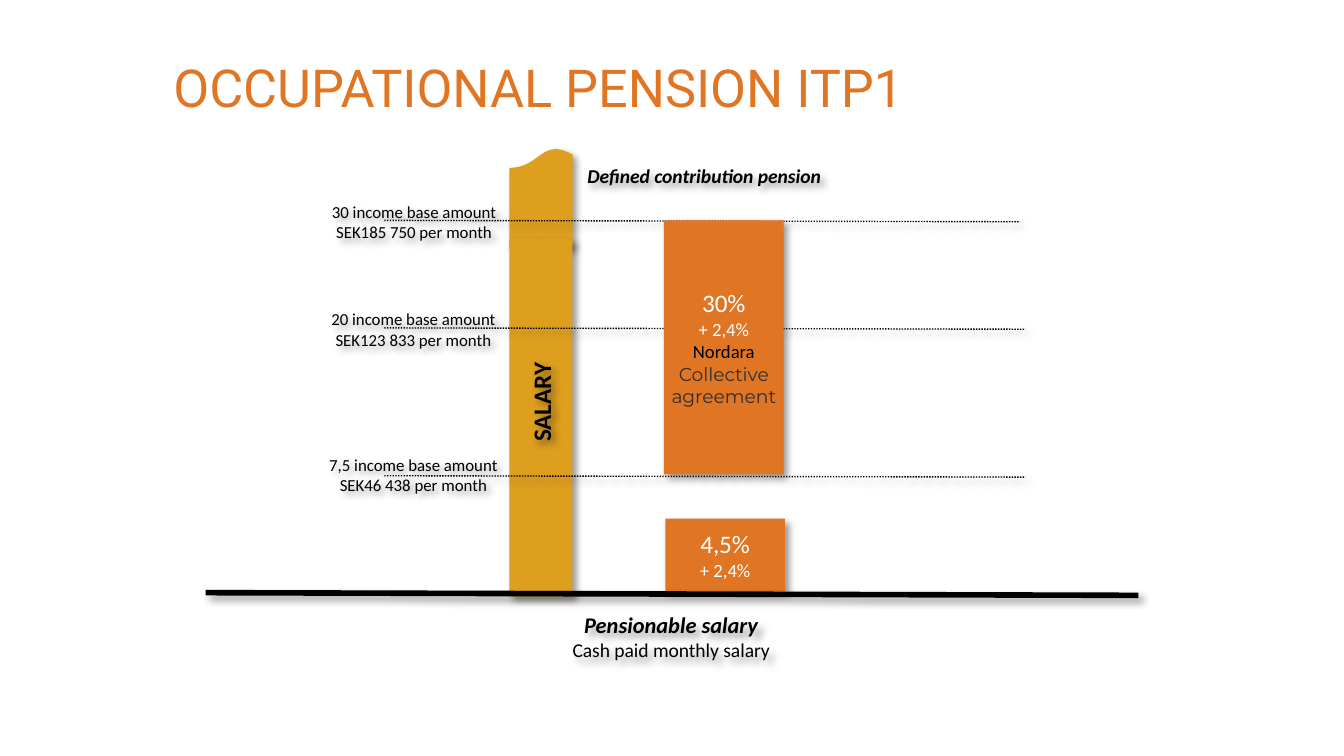
from pptx import Presentation
from pptx.dml.color import RGBColor
from pptx.enum.dml import MSO_LINE
from pptx.enum.shapes import MSO_CONNECTOR, MSO_SHAPE
from pptx.enum.text import MSO_ANCHOR, PP_ALIGN
from pptx.oxml import parse_xml
from pptx.util import Inches, Pt

ORANGE = RGBColor(0xE0, 0x75, 0x23)
GOLD = RGBColor(0xDE, 0x9F, 0x1F)
BLACK = RGBColor(0, 0, 0)
WHITE = RGBColor(0xFF, 0xFF, 0xFF)
CHARCOAL = RGBColor(0x2D, 0x2F, 0x33)

SHADOW = (
    '<a:effectLst xmlns:a="http://schemas.openxmlformats.org/drawingml/2006/main">'
    '<a:outerShdw blurRad="50800" dist="38100" dir="2700000" algn="tl" rotWithShape="0">'
    '<a:srgbClr val="000000"><a:alpha val="40000"/></a:srgbClr>'
    '</a:outerShdw></a:effectLst>'
)


def add_shadow(shape):
    shape._element.spPr.append(parse_xml(SHADOW))


def write_lines(shape, lines, alignment=PP_ALIGN.CENTER, margin=0, wrap=True):
    """Fill a shape with (text, size, colour, font, bold, italic) paragraphs."""
    text_frame = shape.text_frame
    text_frame.word_wrap = wrap
    text_frame.margin_left = text_frame.margin_right = Inches(margin)
    text_frame.margin_top = text_frame.margin_bottom = Inches(margin / 2)
    text_frame.text = "\n".join(line[0] for line in lines)
    for paragraph, (_, size, colour, name, bold, italic) in zip(text_frame.paragraphs, lines):
        paragraph.alignment = alignment
        for run in paragraph.runs:
            run.font.size = Pt(size)
            run.font.color.rgb = colour
            run.font.name = name
            run.font.bold = bold
            run.font.italic = italic


presentation = Presentation()
presentation.slide_width = Inches(10)
presentation.slide_height = presentation.slide_width * 9 // 16
slide = presentation.slides.add_slide(presentation.slide_layouts[5])
shapes = slide.shapes

# Title
title = shapes.title
title.left, title.top = Inches(1.19), Inches(0.44)
title.width, title.height = Inches(7.5), Inches(0.57)
write_lines(title, [("OCCUPATIONAL PENSION ITP1", 28, ORANGE, "Roboto", False, False)],
            PP_ALIGN.LEFT, 0.1)
title.text_frame.vertical_anchor = MSO_ANCHOR.TOP
title.text_frame.paragraphs[0].line_spacing = 0.83

# Bars: the salary column with its wavy top, and the two contribution bars
bars = {}
for name, kind, colour, left, top, width, height in [
    ("salary top", MSO_SHAPE.FLOWCHART_DOCUMENT, GOLD, 3.79, 1.1, 0.47, 0.75),
    ("salary", MSO_SHAPE.RECTANGLE, GOLD, 3.79, 1.78, 0.47, 2.66),
    ("lower contribution", MSO_SHAPE.RECTANGLE, ORANGE, 4.95, 3.86, 0.89, 0.54),
    ("upper contribution", MSO_SHAPE.RECTANGLE, ORANGE, 4.94, 1.64, 0.89, 1.89),
]:
    bar = shapes.add_shape(kind, Inches(left), Inches(top), Inches(width), Inches(height))
    bar.fill.solid()
    bar.fill.fore_color.rgb = colour
    bar.line.fill.background()
    add_shadow(bar)
    bars[name] = bar
bars["salary top"].rotation = 180

write_lines(bars["lower contribution"], [
    ("4,5%", 13.5, WHITE, "Calibri", False, False),
    ("+ 2,4%", 10, WHITE, "Calibri", False, False),
], wrap=False)
write_lines(bars["upper contribution"], [
    ("30%", 13.5, WHITE, "Calibri", False, False),
    ("+ 2,4%", 10, WHITE, "Calibri", False, False),
    ("Nordara", 10, BLACK, "Calibri", False, False),
    ("Collective", 10, CHARCOAL, "Montserrat", False, False),
    ("agreement", 10, CHARCOAL, "Montserrat", False, False),
], wrap=False)

# Income levels and the base line
for left, right, top, drop, weight, dash in [
    (2.86, 7.59, 1.64, 0.01, 0.75, MSO_LINE.ROUND_DOT),
    (2.86, 7.63, 2.44, 0.01, 0.75, MSO_LINE.ROUND_DOT),
    (2.86, 7.63, 3.54, 0.01, 0.75, MSO_LINE.ROUND_DOT),
    (1.53, 8.47, 4.41, 0.02, 3, MSO_LINE.SOLID),
]:
    line = shapes.add_connector(MSO_CONNECTOR.STRAIGHT, Inches(left), Inches(top),
                                Inches(right), Inches(top + drop))
    line.line.color.rgb = BLACK
    line.line.width = Pt(weight)
    line.line.dash_style = dash
    add_shadow(line)

# The upper bar covers the level lines
shapes._spTree.append(bars["upper contribution"]._element)

# Labels
for left, top, width, height, alignment, margin, rotation, text, size, bold, italic in [
    (2.33, 1.5, 1.5, 0.3, PP_ALIGN.CENTER, 0, 0,
     "30 income base amount\vSEK185 750 per month", 9, False, False),
    (2.28, 2.3, 1.59, 0.3, PP_ALIGN.CENTER, 0, 0,
     "20 income base amount\vSEK123 833 per month", 9, False, False),
    (2.34, 3.38, 1.47, 0.3, PP_ALIGN.CENTER, 0, 0,
     "7,5 income base amount\vSEK46 438 per month", 9, False, False),
    (4.37, 1.22, 2.07, 0.18, PP_ALIGN.LEFT, 0, 0,
     "Defined contribution pension", 10.5, True, True),
    (3.63, 2.82, 0.8, 0.33, PP_ALIGN.LEFT, 0.1, 270, "SALARY", 13.5, True, False),
    (1.53, 4.5, 6.93, 0.42, PP_ALIGN.CENTER, 0.1, 0,
     "Pensionable salary\vCash paid monthly salary", 12, True, True),
]:
    label = shapes.add_textbox(Inches(left), Inches(top), Inches(width), Inches(height))
    label.rotation = rotation
    write_lines(label, [(text, size, BLACK, "Calibri", bold, italic)],
                alignment, margin, wrap=rotation == 0)
    add_shadow(label)

# The last label explains its heading in smaller, plain type
explanation = label.text_frame.paragraphs[0].runs[-1]
explanation.font.size = Pt(10.5)
explanation.font.bold = explanation.font.italic = False

presentation.save("out.pptx")
